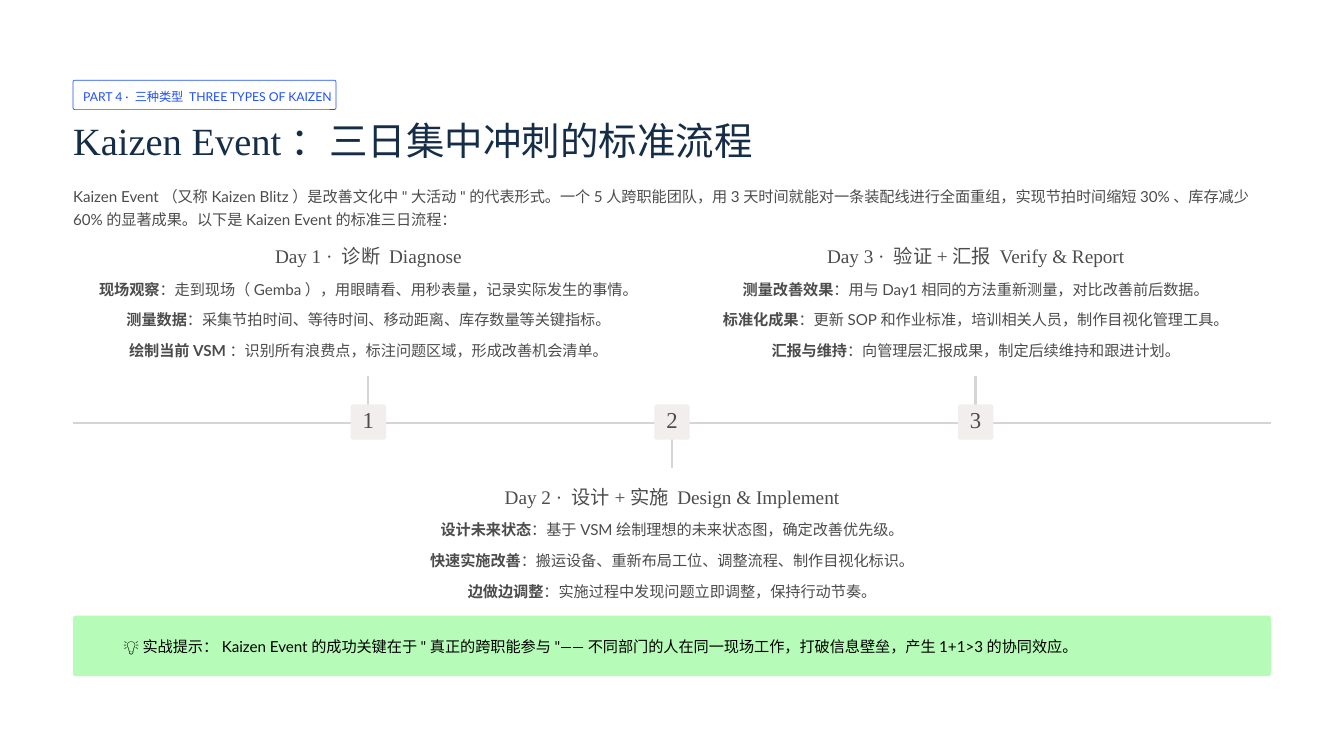
from lxml.etree import SubElement
from pptx import Presentation
from pptx.dml.color import RGBColor
from pptx.enum.shapes import MSO_CONNECTOR, MSO_SHAPE
from pptx.enum.text import MSO_ANCHOR, PP_ALIGN
from pptx.oxml.ns import qn
from pptx.util import Emu, Pt

WHITE = RGBColor(0xFF, 0xFF, 0xFF)
BLACK = RGBColor(0x00, 0x00, 0x00)
BLUE = RGBColor(0x21, 0x50, 0xFE)
NAVY = RGBColor(0x15, 0x2D, 0x47)
GREY = RGBColor(0x4C, 0x4C, 0x4D)
RULE = RGBColor(0xD8, 0xD4, 0xD4)
MARKER = RGBColor(0xF2, 0xEE, 0xEE)
GREEN = RGBColor(0xB6, 0xFC, 0xB8)

SERIF = "Times New Roman"
SANS = "Lato"
WIDTH, HEIGHT = 3200, 1800
LEFT, FULL_WIDTH = 174, 2852
AXIS_Y, AXIS_MIDDLE, DAY_STEP = 1007, 1600, 723
STEM, MARKER_SIZE = 112, 84
DAY_WIDTH, NOTE_OFFSET, NOTE_STEP = 1334, 76, 73
HEADING_ABOVE, HEADING_BELOW = 580, 1153

DAYS = [
    ("Day 1 · 诊断 Diagnose", [
        ("现场观察", "：走到现场（Gemba），用眼睛看、用秒表量，记录实际发生的事情。"),
        ("测量数据", "：采集节拍时间、等待时间、移动距离、库存数量等关键指标。"),
        ("绘制当前VSM", "：识别所有浪费点，标注问题区域，形成改善机会清单。"),
    ]),
    ("Day 2 · 设计+实施 Design & Implement", [
        ("设计未来状态", "：基于VSM绘制理想的未来状态图，确定改善优先级。"),
        ("快速实施改善", "：搬运设备、重新布局工位、调整流程、制作目视化标识。"),
        ("边做边调整", "：实施过程中发现问题立即调整，保持行动节奏。"),
    ]),
    ("Day 3 · 验证+汇报 Verify & Report", [
        ("测量改善效果", "：用与Day1相同的方法重新测量，对比改善前后数据。"),
        ("标准化成果", "：更新SOP和作业标准，培训相关人员，制作目视化管理工具。"),
        ("汇报与维持", "：向管理层汇报成果，制定后续维持和跟进计划。"),
    ]),
]


class KaizenSlide:
    """Draws styled elements on one slide, with lengths in px at 200 to the inch."""

    def __init__(self, deck):
        self.slide = deck.slides.add_slide(deck.slide_layouts[6])

    @staticmethod
    def px(*lengths):
        return [Emu(length * 4572) for length in lengths]

    def panel(self, left, top, width, height, corner=0, fill=None, outline=None):
        preset = MSO_SHAPE.ROUNDED_RECTANGLE if corner else MSO_SHAPE.RECTANGLE
        panel = self.slide.shapes.add_shape(preset, *self.px(left, top, width, height))
        if corner:
            panel.adjustments[0] = corner
        panel.shadow.inherit = False
        if fill is None:
            panel.fill.background()
        else:
            panel.fill.solid()
            panel.fill.fore_color.rgb = fill
        if outline is None:
            panel.line.fill.background()
        else:
            panel.line.color.rgb = outline
            panel.line.width = Pt(0.6)

    def rule(self, x1, y1, x2, y2):
        rule = self.slide.shapes.add_connector(
            MSO_CONNECTOR.STRAIGHT, *self.px(x1, y1, x2, y2))
        rule.line.color.rgb = RULE
        rule.line.width = Pt(2)
        SubElement(rule.element.spPr, qn("a:effectLst"))

    def text(self, left, top, width, height, runs, size=13, font=SANS, color=GREY,
             spacing=19.5, align=PP_ALIGN.LEFT, anchor=MSO_ANCHOR.TOP):
        box = self.slide.shapes.add_textbox(*self.px(left, top, width, height))
        frame = box.text_frame
        frame.margin_left = frame.margin_right = 0
        frame.margin_top = frame.margin_bottom = 0
        frame.word_wrap = True
        frame.vertical_anchor = anchor
        paragraph = frame.paragraphs[0]
        paragraph.alignment = align
        paragraph.line_spacing = Pt(spacing)
        for words, bold in runs:
            run = paragraph.add_run()
            run.text = words
            run.font.name = font
            run.font.size = Pt(size)
            run.font.bold = bold
            run.font.color.rgb = color

    def day(self, number, heading, notes):
        center = AXIS_MIDDLE + (number - 2) * DAY_STEP
        left = center - DAY_WIDTH // 2
        above = number % 2 == 1
        top = HEADING_ABOVE if above else HEADING_BELOW
        self.rule(center, AXIS_Y, center, AXIS_Y + (-STEM if above else STEM - 5))
        self.panel(center - MARKER_SIZE // 2, 963, MARKER_SIZE, MARKER_SIZE,
                   0.07, fill=MARKER)
        self.text(center - 28, 970, 56, 70, [(str(number), False)], size=19.5,
                  font=SERIF, align=PP_ALIGN.CENTER, anchor=MSO_ANCHOR.MIDDLE)
        self.text(left, top, DAY_WIDTH, 58, [(heading, False)], size=16.5,
                  font=SERIF, spacing=20.5, align=PP_ALIGN.CENTER)
        for row, (label, detail) in enumerate(notes):
            self.text(left, top + NOTE_OFFSET + row * NOTE_STEP, DAY_WIDTH, 54,
                      [(label, True), (detail, False)], align=PP_ALIGN.CENTER)


def main():
    deck = Presentation()
    deck.slide_width, deck.slide_height = KaizenSlide.px(WIDTH, HEIGHT)
    page = KaizenSlide(deck)

    page.panel(0, 0, WIDTH, HEIGHT, fill=WHITE)
    page.panel(LEFT, 191, 626, 70, 0.06, outline=BLUE)
    page.text(198, 204, 640, 44, [("PART 4 · 三种类型 THREE TYPES OF KAIZEN", False)],
              size=10.5, color=BLUE, spacing=15.5)
    page.text(LEFT, 273, 1800, 116, [("Kaizen Event：三日集中冲刺的标准流程", False)],
              size=33, font=SERIF, color=NAVY, spacing=41.5)
    page.text(LEFT, 435, FULL_WIDTH, 110, [(
        "Kaizen Event（又称Kaizen Blitz）是改善文化中\"大活动\"的代表形式。"
        "一个5人跨职能团队，用3天时间就能对一条装配线进行全面重组，"
        "实现节拍时间缩短30%、库存减少60%的显著成果。"
        "以下是Kaizen Event的标准三日流程：", False)])

    page.rule(LEFT, AXIS_Y, LEFT + FULL_WIDTH, AXIS_Y)
    for number, (heading, notes) in enumerate(DAYS, start=1):
        page.day(number, heading, notes)

    page.panel(LEFT, 1466, FULL_WIDTH, 144, 0.04, fill=GREEN)
    page.text(294, 1506, 2696, 56, [(
        "💡 实战提示：Kaizen Event的成功关键在于\"真正的跨职能参与\""
        "——不同部门的人在同一现场工作，打破信息壁垒，产生1+1>3的协同效应。", False)],
        color=BLACK)
    deck.save("out.pptx")


if __name__ == "__main__":
    main()
